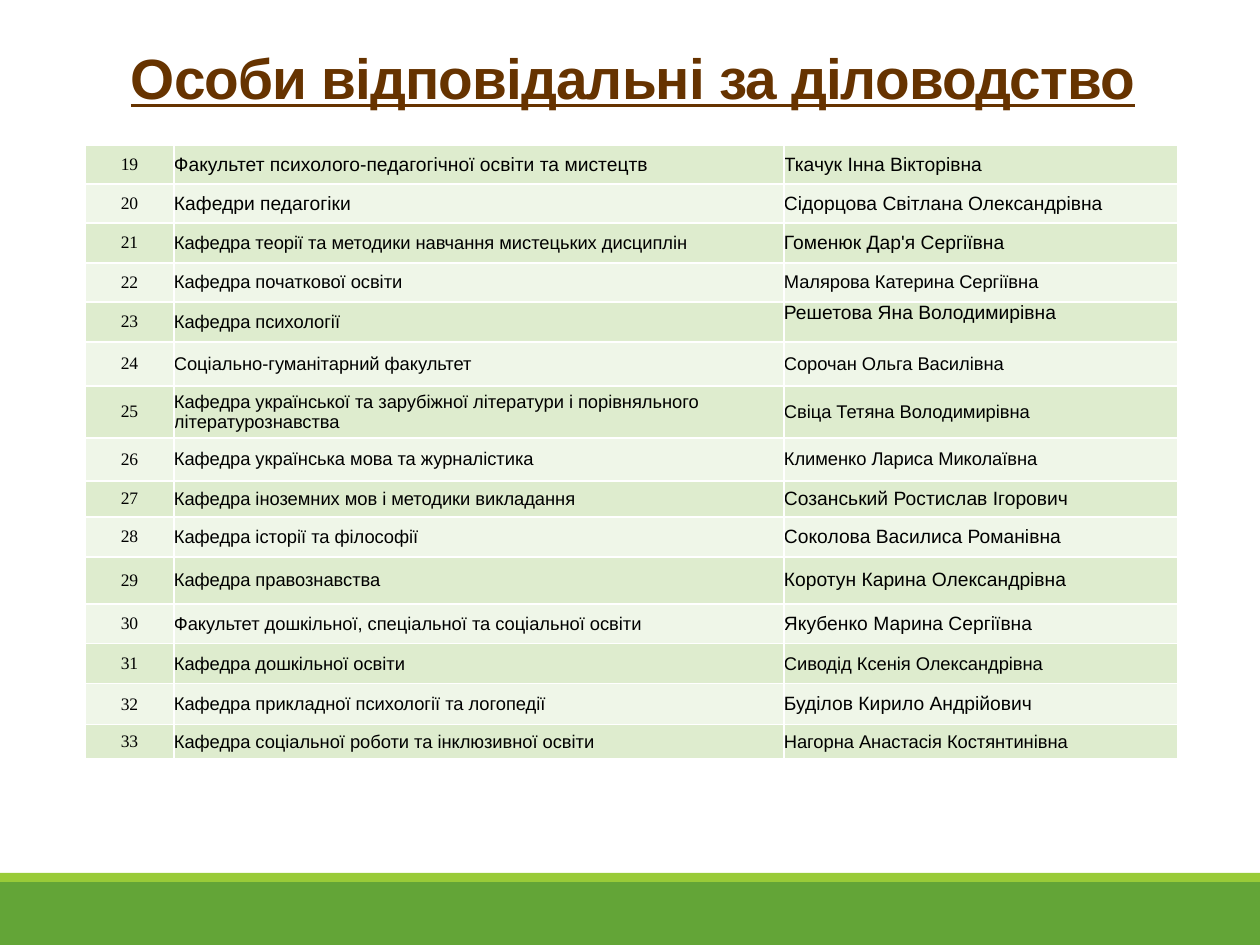
from lxml import etree
from pptx import Presentation
from pptx import util as u
from pptx.dml import color
from pptx.enum import shapes, text
from pptx.oxml import ns

PX = u.Inches(1) // 126
FIRST_NUMBER = 19
COLUMN_WIDTHS = (89, 610, 394)
BANDS = ("DEECCE", "EFF6E8")
STAFF = (
    (39, "Факультет психолого-педагогічної освіти та мистецтв", 11, "Ткачук Інна Вікторівна", 11),
    (39, "Кафедри педагогіки", 11, "Сідорцова Світлана Олександрівна", 11),
    (40, "Кафедра теорії та методики навчання мистецьких дисциплін", 10.5, "Гоменюк Дар'я Сергіївна", 11),
    (39, "Кафедра початкової освіти", 10.5, "Малярова Катерина Сергіївна", 10.5),
    (40, "Кафедра психології", 10.5, "Решетова Яна Володимирівна", 11),
    (44, "Соціально-гуманітарний факультет", 10.5, "Сорочан Ольга Василівна", 10.5),
    (52, "Кафедра української та зарубіжної літератури і порівняльного літературознавства", 10.5,
     "Свіца Тетяна Володимирівна", 10.5),
    (43, "Кафедра українська мова та журналістика", 10.5, "Клименко Лариса Миколаївна", 10.5),
    (36, "Кафедра іноземних мов і методики викладання", 10.5, "Созанський Ростислав Ігорович", 11),
    (40, "Кафедра історії та філософії", 10.5, "Соколова Василиса Романівна", 11),
    (47, "Кафедра правознавства", 10.5, "Коротун Карина Олександрівна", 11),
    (40, "Факультет дошкільної, спеціальної та соціальної освіти", 10.5, "Якубенко Марина Сергіївна", 11),
    (40, "Кафедра дошкільної освіти", 10.5, "Сиводід Ксенія Олександрівна", 10.5),
    (41, "Кафедра прикладної психології та логопедії", 10.5, "Буділов Кирило Андрійович", 11),
    (34, "Кафедра соціальної роботи та інклюзивної освіти", 10.5, "Нагорна Анастасія Костянтинівна", 10.5),
)


def rgb(code):
    """Turn a hex string into a colour."""
    return color.RGBColor.from_string(code)


def px(*lengths):
    """Turn lengths in px into EMU."""
    return [length * PX for length in lengths]


def paint(fill, code):
    """Give a fill one solid colour."""
    fill.solid()
    fill.fore_color.rgb = rgb(code)


def add_run(paragraph, words, size, font="Arial", code="000000"):
    """Append a formatted run to a paragraph."""
    run = paragraph.add_run()
    run.text = words
    run.font.size = u.Pt(size)
    run.font.name = font
    run.font.color.rgb = rgb(code)
    return run


def clear_margins(holder):
    """Remove the inner margins of a cell or text frame."""
    holder.margin_left = holder.margin_right = holder.margin_top = holder.margin_bottom = 0


def add_band(slide, top, height, code):
    """Draw a full-width footer band."""
    band = slide.shapes.add_shape(shapes.MSO_SHAPE.RECTANGLE, *px(0, top, 1260, height))
    band.shadow.inherit = False
    paint(band.fill, code)
    band.line.fill.background()


def set_title(slide, words):
    """Place and format the slide title."""
    title = slide.shapes.title
    title.left, title.top, title.width, title.height = px(113, 39, 1040, 86)
    frame = title.text_frame
    clear_margins(frame)
    frame.word_wrap = True
    frame.auto_size = text.MSO_AUTO_SIZE.NONE
    frame.vertical_anchor = text.MSO_ANCHOR.MIDDLE
    heading = frame.paragraphs[0]
    heading.alignment = text.PP_ALIGN.CENTER
    heading.line_spacing = 0.85
    run = add_run(heading, words, 32.4, code="663300")
    run.font.bold = run.font.underline = True
    run.font._element.set("spc", "-50")


def add_borders(cell, code):
    """Draw one-point borders on all sides of a cell."""
    properties = cell._tc.get_or_add_tcPr()
    for position, side in enumerate(("a:lnL", "a:lnR", "a:lnT", "a:lnB")):
        border = etree.Element(ns.qn(side), w=str(u.Pt(1)))
        solid = etree.SubElement(border, ns.qn("a:solidFill"))
        etree.SubElement(solid, ns.qn("a:srgbClr"), val=code)
        properties.insert(position, border)


def fill_cell(cell, words, size, band, font="Arial", align=text.PP_ALIGN.LEFT):
    """Format a table cell and write its text."""
    clear_margins(cell)
    cell.vertical_anchor = text.MSO_ANCHOR.MIDDLE
    paint(cell.fill, band)
    add_borders(cell, "FFFFFF")
    paragraph = cell.text_frame.paragraphs[0]
    paragraph.alignment = align
    add_run(paragraph, words, size, font)


def add_staff_table(slide):
    """Build the table of departments and responsible persons."""
    total = sum(entry[0] for entry in STAFF)
    table = slide.shapes.add_table(
        len(STAFF), len(COLUMN_WIDTHS), *px(85, 145, sum(COLUMN_WIDTHS), total)).table
    table.first_row = table.horz_banding = False
    for column, width in zip(table.columns, COLUMN_WIDTHS):
        column.width = width * PX
    for index, (height, department, department_size, person, person_size) in enumerate(STAFF):
        table.rows[index].height = height * PX
        band = BANDS[index % 2]
        fill_cell(table.cell(index, 0), str(FIRST_NUMBER + index), 10, band,
                  "Times New Roman", text.PP_ALIGN.CENTER)
        fill_cell(table.cell(index, 1), department, department_size, band)
        fill_cell(table.cell(index, 2), person, person_size, band)
    table.cell(23 - FIRST_NUMBER, 2).vertical_anchor = text.MSO_ANCHOR.TOP


def main():
    """Build and save the slide."""
    deck = Presentation()
    deck.slide_width, deck.slide_height = px(1260, 945)
    slide = deck.slides.add_slide(deck.slide_layouts[5])
    paint(slide.background.fill, "FFFFFF")
    add_band(slide, 882, 63, "63A537")
    add_band(slide, 873, 9, "99CB38")
    set_title(slide, "Особи відповідальні за діловодство")
    add_staff_table(slide)
    deck.save("out.pptx")


if __name__ == "__main__":
    main()
